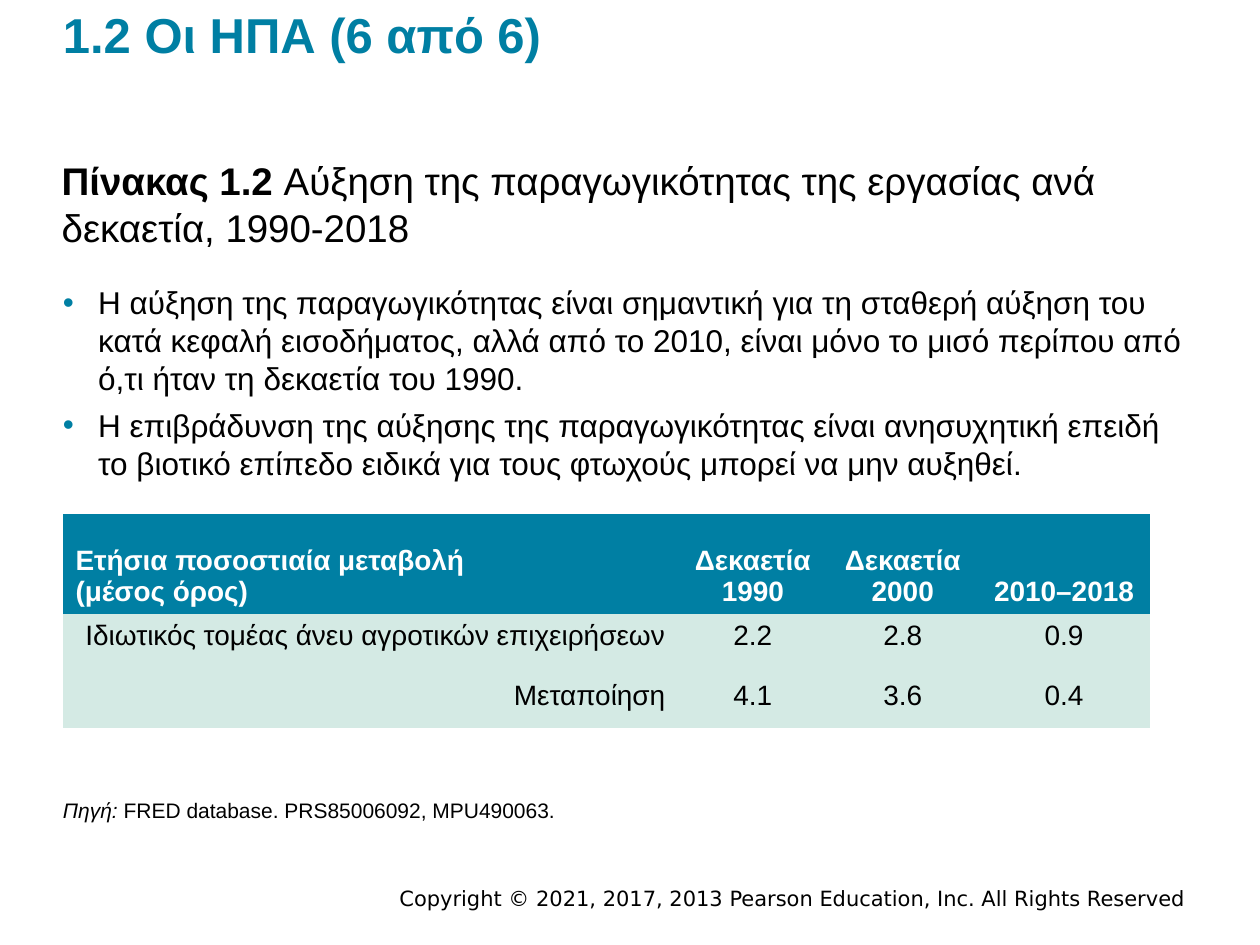
from lxml.etree import SubElement
from pptx import Presentation
from pptx.dml.color import RGBColor
from pptx.enum.text import MSO_ANCHOR, PP_ALIGN
from pptx.oxml.ns import qn
from pptx.util import Inches, Pt

HUES = {"teal": "007FA3", "mint": "D4EAE4", "black": "000000", "white": "FFFFFF"}
LEFT, RIGHT, MID = PP_ALIGN.LEFT, PP_ALIGN.RIGHT, PP_ALIGN.CENTER


def write(para, text, size=12, hue="black", font="Arial", bold=False, slant=False, align=LEFT):
    para.alignment = align
    run = para.add_run()
    run.text = text
    run.font.size = Pt(size)
    run.font.name = font
    run.font.bold = bold
    run.font.italic = slant
    run.font.color.rgb = RGBColor.from_string(HUES[hue])


def add_box(left, top, width, height, inset=0):
    frame = slide.shapes.add_textbox(*map(Inches, (left, top, width, height))).text_frame
    frame.word_wrap = True
    if not inset:
        frame.margin_left = frame.margin_right = frame.margin_top = frame.margin_bottom = 0
    return frame


deck = Presentation()
deck.slide_width, deck.slide_height = Inches(10), Inches(7.5)
slide = deck.slides.add_slide(deck.slide_layouts[6])

foot = add_box(1.68, 6.98, 7.83, 0.3, inset=1)
write(foot.paragraphs[0], "Copyright © 2021, 2017, 2013 Pearson Education, Inc. All Rights Reserved",
      font="DejaVu Sans", align=RIGHT)

title = add_box(0.5, 0, 9, 0.5)
title.vertical_anchor = MSO_ANCHOR.BOTTOM
write(title.paragraphs[0], "1.2 Οι ΗΠΑ (6 από 6)", size=28, hue="teal", bold=True)

points = [
    "Η αύξηση της παραγωγικότητας είναι σημαντική για τη σταθερή αύξηση του κατά κεφαλή "
    "εισοδήματος, αλλά από το 2010, είναι μόνο το μισό περίπου από ό,τι ήταν τη δεκαετία του 1990.",
    "Η επιβράδυνση της αύξησης της παραγωγικότητας είναι ανησυχητική επειδή το βιοτικό "
    "επίπεδο ειδικά για τους φτωχούς μπορεί να μην αυξηθεί.",
]
body = add_box(0.5, 2.25, 9, 1.9)
for num, point in enumerate(points):
    para = body.add_paragraph() if num else body.paragraphs[0]
    if num:
        para.space_before = Pt(5.2)
    props = para._p.get_or_add_pPr()
    props.set("marL", str(Inches(0.28)))
    props.set("indent", str(-Inches(0.28)))
    SubElement(SubElement(props, qn("a:buClr")), qn("a:srgbClr"), val=HUES["teal"])
    SubElement(props, qn("a:buFont"), typeface="Arial")
    SubElement(props, qn("a:buChar"), char="•")
    write(para, point, size=18)

head = add_box(0.49, 1.25, 9, 0.42).paragraphs[0]
write(head, "Πίνακας 1.2 ", size=22, bold=True)
write(head, "Αύξηση της παραγωγικότητας της εργασίας ανά δεκαετία, 1990-2018", size=22)

data = [
    ["Ετήσια ποσοστιαία μεταβολή\n(μέσος όρος)", "Δεκαετία\n1990", "Δεκαετία\n2000", "2010–2018"],
    ["Ιδιωτικός τομέας άνευ αγροτικών επιχειρήσεων", "2.2", "2.8", "0.9"],
    ["Μεταποίηση", "4.1", "3.6", "0.4"],
]
grid = slide.shapes.add_table(3, 4, Inches(0.5), Inches(4.08), Inches(8.62), Inches(1.69)).table
for col, width in zip(grid.columns, (4.88, 1.19, 1.19, 1.37)):
    col.width = Inches(width)
for row, height in zip(grid.rows, (0.79, 0.48, 0.43)):
    row.height = Inches(height)
for r, row in enumerate(data):
    top = r == 0
    for c, text in enumerate(row):
        cell = grid.cell(r, c)
        cell.fill.solid()
        cell.fill.fore_color.rgb = RGBColor.from_string(HUES["teal" if top else "mint"])
        cell.vertical_anchor = MSO_ANCHOR.BOTTOM if top else MSO_ANCHOR.TOP
        align = MID if c else LEFT if top else RIGHT
        for num, line in enumerate(text.split("\n")):
            para = cell.text_frame.add_paragraph() if num else cell.text_frame.paragraphs[0]
            write(para, line, size=16, hue="white" if top else "black", bold=top, align=align)
        for side in ("a:lnL", "a:lnR", "a:lnT", "a:lnB"):
            edge = cell._tc.get_or_add_tcPr().makeelement(qn(side), {"w": "0"})
            SubElement(edge, qn("a:noFill"))
            cell._tc.tcPr.insert(len(cell._tc.tcPr) - 1, edge)

source = add_box(0.5, 6.33, 9, 0.25).paragraphs[0]
write(source, "Πηγή: ", slant=True)
write(source, "FRED database. PRS85006092, MPU490063.")

deck.save("out.pptx")
